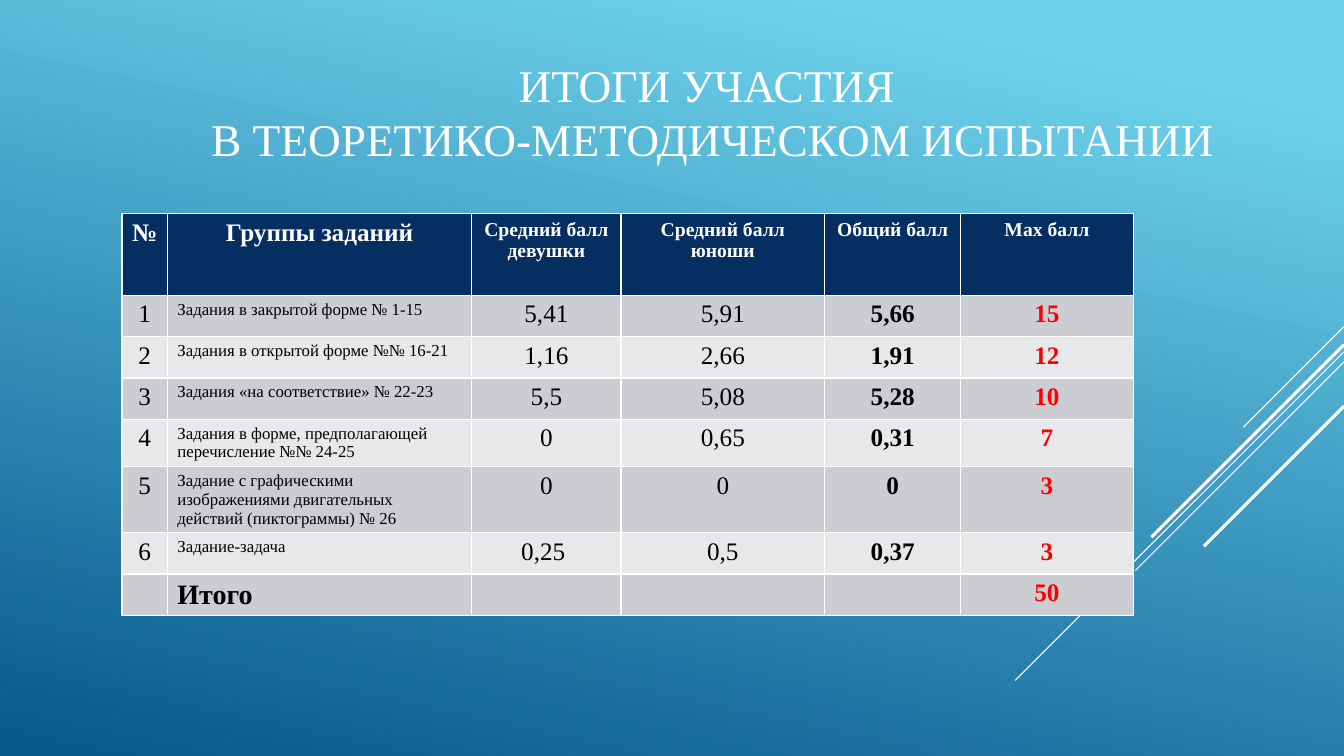
from lxml import etree
from pptx import Presentation
from pptx.dml.color import RGBColor
from pptx.enum.shapes import MSO_CONNECTOR
from pptx.enum.text import MSO_ANCHOR, MSO_AUTO_SIZE, PP_ALIGN
from pptx.oxml import parse_xml
from pptx.oxml.ns import nsdecls, qn
from pptx.util import Inches, Pt

WHITE, BLACK, RED, NAVY = "FFFFFF", "000000", "FF0000", "052F61"
BANDS = ["E7E8EA", "CCCDD2"]


def color(hex_text):
    return RGBColor.from_string(hex_text)


def write(frame, text, size=18, ink=BLACK, bold=False, align=PP_ALIGN.CENTER):
    para = frame.paragraphs[0]
    para.text = text
    para.alignment = align
    for span in para.runs:
        span.font.name = "Times New Roman"
        span.font.size = Pt(size)
        span.font.bold = bold
        span.font.color.rgb = color(ink)


deck = Presentation()
deck.slide_width, deck.slide_height = Inches(13.33), Inches(7.5)
page = deck.slides.add_slide(deck.slide_layouts[5])

# Background gradient
backdrop = page.background.fill
backdrop.gradient()
backdrop.gradient_angle = 360 - 102
for stop, (position, shade) in zip(backdrop.gradient_stops, [(0.1, "6ED2EB"), (1, "06588E")]):
    stop.position = position
    stop.color.rgb = color(shade)

# Diagonal lines, all at 45 degrees from the right edge
for top, run_length, weight in [(3.24, 1, 0.75), (3.49, 3.26, 0.75), (3.59, 2.07, 0.75),
                                (3.42, 1.91, 2.25), (4.03, 1.39, 2.25)]:
    stripe = page.shapes.add_connector(
        MSO_CONNECTOR.STRAIGHT, Inches(13.33), Inches(top),
        Inches(13.33 - run_length), Inches(top + run_length))
    stripe.line.color.rgb = color(WHITE)
    stripe.line.width = Pt(weight)
    etree.SubElement(stripe.element.spPr, qn("a:effectLst"))

# Title
title = page.shapes.title
title.left, title.top = Inches(1.87), Inches(0.28)
title.width, title.height = Inches(10.28), Inches(1.65)
title.text_frame.word_wrap = True
title.text_frame.auto_size = MSO_AUTO_SIZE.NONE
title.text_frame.vertical_anchor = MSO_ANCHOR.MIDDLE
write(title.text_frame, "ИТОГИ УЧАСТИЯ\v В ТЕОРЕТИКО-МЕТОДИЧЕСКОМ ИСПЫТАНИИ ", size=32.4, ink=WHITE)

# Results table
rows = [
    ["№", "Группы заданий", "Средний балл девушки", "Средний балл юноши", "Общий балл", "Мах балл"],
    ["1", "Задания в закрытой форме № 1-15", "5,41", "5,91", "5,66", "15"],
    ["2", "Задания в открытой форме №№ 16-21", "1,16", "2,66", "1,91", "12"],
    ["3", "Задания «на соответствие» № 22-23", "5,5", "5,08", "5,28", "10"],
    ["4", "Задания в форме, предполагающей перечисление №№ 24-25", "0", "0,65", "0,31", "7"],
    ["5", "Задание с графическими изображениями двигательных действий (пиктограммы) № 26",
     "0", "0", "0", "3"],
    ["6", "Задание-задача", "0,25 ", "0,5", "0,37", "3"],
    ["", "Итого", "", "", "", "50"],
]
widths = [0.45, 3.02, 1.48, 2.02, 1.35, 1.71]
total_row = len(rows) - 1
table = page.shapes.add_table(len(rows), len(widths), Inches(1.21), Inches(2.12),
                              Inches(sum(widths)), Inches(3.68)).table
for column, width in zip(table.columns, widths):
    column.width = Inches(width)

for r, row in enumerate(rows):
    table.rows[r].height = Inches(0.41 if r else 0.81)
    for c, text in enumerate(row):
        cell = table.cell(r, c)
        if r == 0:
            style = dict(size=18 if c < 2 else 14, ink=WHITE, bold=True)
        elif c == 1:
            style = dict(size=20 if r == total_row else 12, bold=r == total_row, align=PP_ALIGN.LEFT)
        else:
            style = dict(ink=RED if c == 5 else BLACK, bold=c >= 4)
        if text:
            write(cell.text_frame, text, **style)
        properties = cell._tc.get_or_add_tcPr()
        for side in ("lnL", "lnR", "lnT", "lnB"):
            properties.append(parse_xml(
                f'<a:{side} {nsdecls("a")} w="{Pt(1)}"><a:solidFill>'
                f'<a:srgbClr val="{WHITE}"/></a:solidFill></a:{side}>'))
        cell.fill.solid()
        cell.fill.fore_color.rgb = color(BANDS[r % 2] if r else NAVY)

deck.save("out.pptx")
